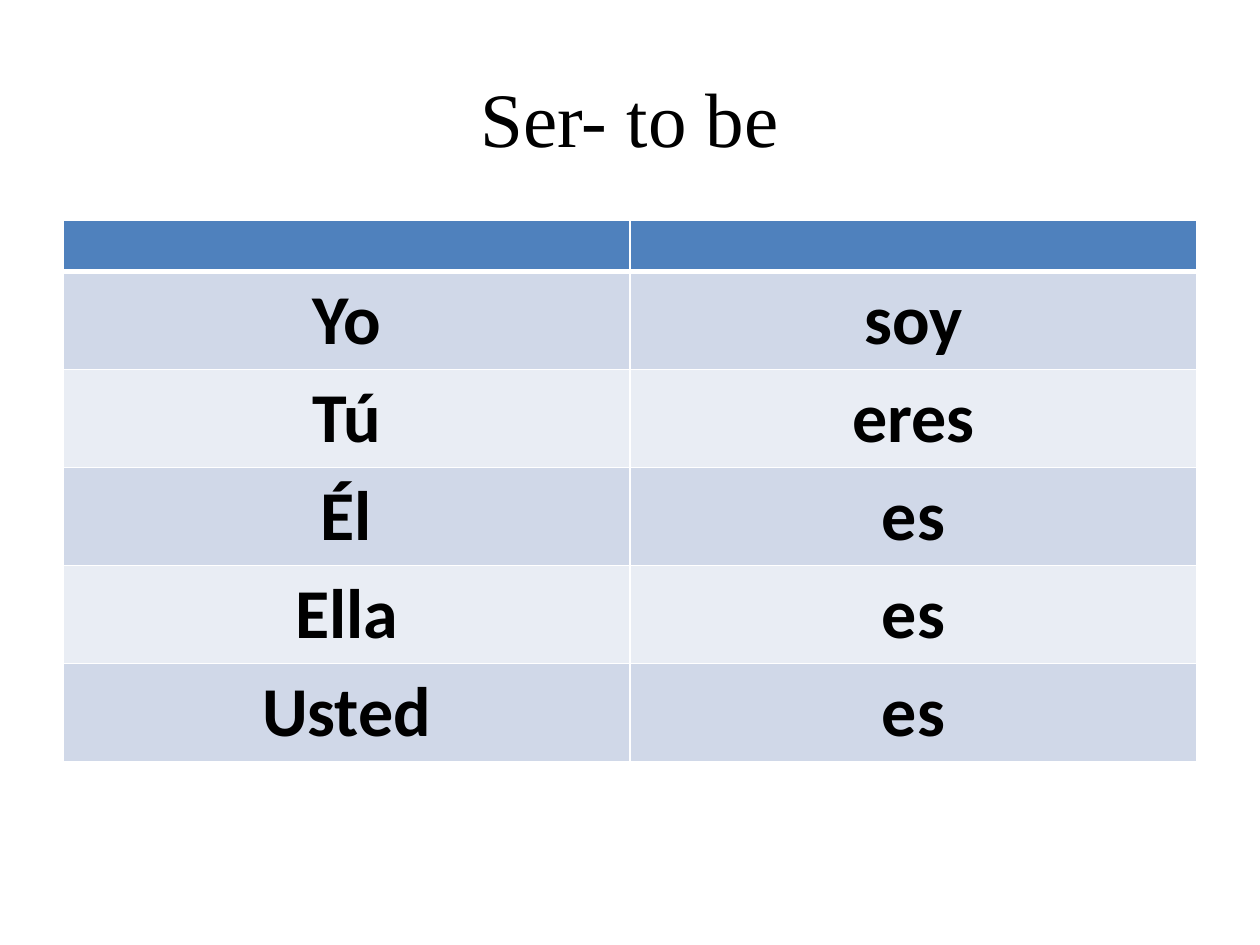
from lxml.etree import SubElement
from pptx import Presentation
from pptx.dml.color import RGBColor
from pptx.enum.text import MSO_ANCHOR, PP_ALIGN
from pptx.oxml.ns import qn
from pptx.util import Pt

BLACK = RGBColor(0x00, 0x00, 0x00)
WHITE = RGBColor(0xFF, 0xFF, 0xFF)
HEADER_BLUE = RGBColor(0x4F, 0x81, 0xBD)
BAND_DARK = RGBColor(0xD0, 0xD8, 0xE8)
BAND_LIGHT = RGBColor(0xE9, 0xED, 0xF4)

CONJUGATION = [
    ("Yo", "soy"),
    ("Tú", "eres"),
    ("Él", "es"),
    ("Ella", "es"),
    ("Usted", "es"),
]


def add_text(paragraph, text, font_name, size, bold=False):
    paragraph.alignment = PP_ALIGN.CENTER
    run = paragraph.add_run()
    run.text = text
    run.font.name = font_name
    run.font.size = Pt(size)
    run.font.bold = bold
    run.font.color.rgb = BLACK


def add_border(cell, side, width):
    line = SubElement(cell._tc.get_or_add_tcPr(), qn(f"a:ln{side}"), w=str(Pt(width)))
    fill = SubElement(line, qn("a:solidFill"))
    SubElement(fill, qn("a:srgbClr"), val=str(WHITE))


prs = Presentation()
prs.slide_width, prs.slide_height = Pt(720), Pt(540)
slide = prs.slides.add_slide(prs.slide_layouts[5])
slide.background.fill.solid()
slide.background.fill.fore_color.rgb = WHITE

# Title
heading = slide.shapes.title
heading.left, heading.top, heading.width, heading.height = Pt(36), Pt(21.6), Pt(648), Pt(90)
heading.text_frame.vertical_anchor = MSO_ANCHOR.MIDDLE
add_text(heading.text_frame.paragraphs[0], "Ser- to be", "Times New Roman", 44)

# Conjugation table: an empty header row, then pronoun and verb form
rows = [("", "")] + CONJUGATION
verb_table = slide.shapes.add_table(len(rows), 2, Pt(36), Pt(126), Pt(648), Pt(309)).table
for r, words in enumerate(rows):
    verb_table.rows[r].height = Pt(56 if r else 29)
    for c, word in enumerate(words):
        cell = verb_table.cell(r, c)
        for side in "LRTB":
            # The rule below the header is thicker
            below_header = (r, side) in ((0, "B"), (1, "T"))
            add_border(cell, side, 3 if below_header else 1)
        cell.fill.solid()
        cell.fill.fore_color.rgb = HEADER_BLUE if r == 0 else BAND_DARK if r % 2 else BAND_LIGHT
        if word:
            add_text(cell.text_frame.paragraphs[0], word, "Calibri", 40, bold=True)

prs.save("out.pptx")
